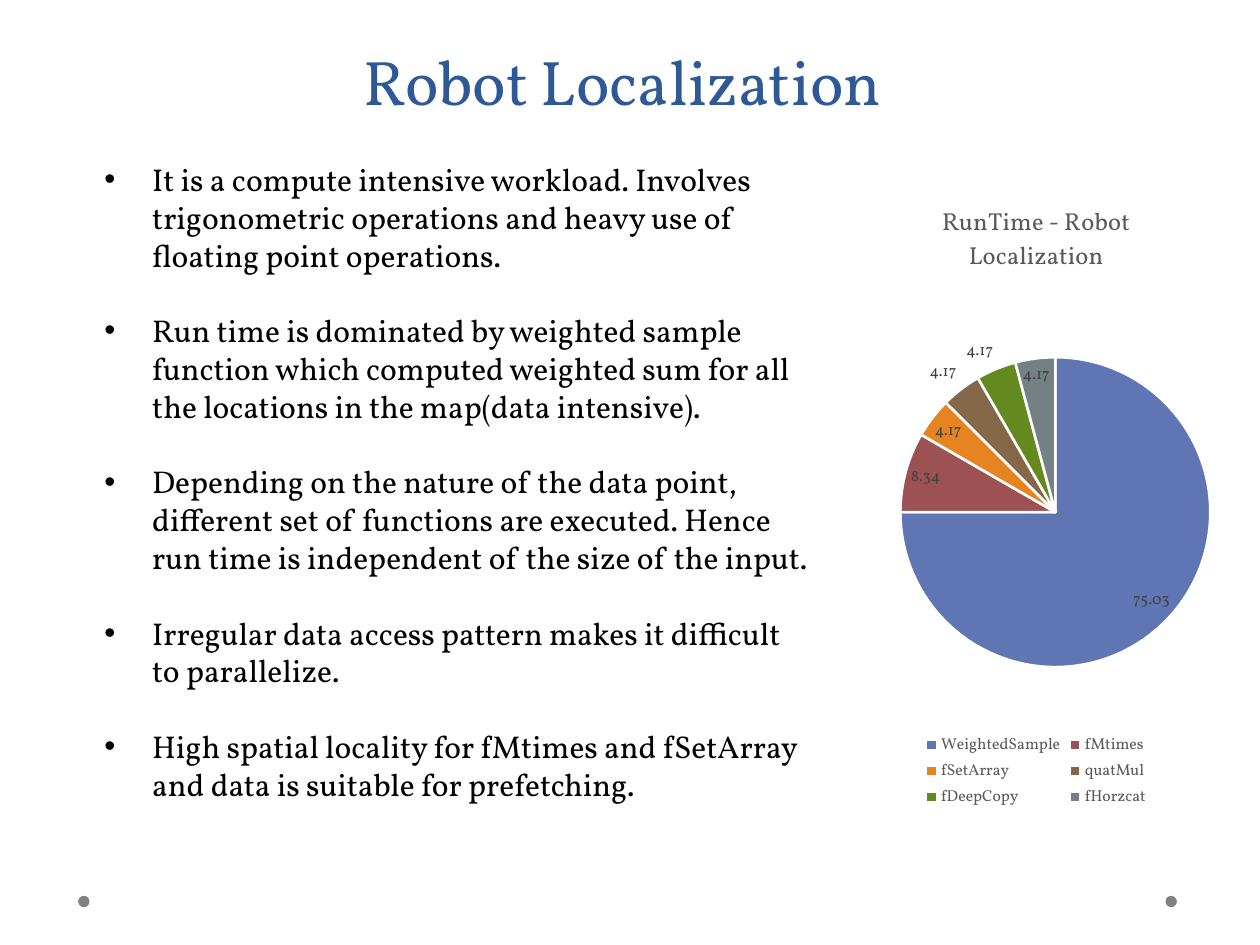
"""Build the Robot Localization slide with its bullets and run-time pie."""
from pptx import Presentation
from pptx.chart.data import CategoryChartData
from pptx.dml.color import RGBColor
from pptx.enum.chart import XL_CHART_TYPE, XL_LABEL_POSITION, XL_LEGEND_POSITION
from pptx.enum.shapes import MSO_SHAPE
from pptx.enum.text import MSO_ANCHOR, MSO_AUTO_SIZE, PP_ALIGN
from pptx.oxml import parse_xml
from pptx.oxml.ns import nsdecls
from pptx.util import Inches, Pt

TITLE = "Robot Localization"
POINTS = [
    "It is a compute intensive workload. Involves trigonometric operations and heavy use of floating point operations.",
    "Run time is dominated by weighted sample function which computed weighted sum for all the locations in the map(data intensive).",
    "Depending on the nature of the data point, different set of functions are executed. Hence run time is independent of the size of the input.",
    "Irregular data access pattern makes it difficult to parallelize.",
    "High spatial locality for fMtimes and fSetArray and data is suitable for prefetching.",
]
HEAD = "RunTime - Robot Localization"
SHARES = [
    ("WeightedSample", 75.03, RGBColor(0x60, 0x76, 0xB4)),
    ("fMtimes", 8.34, RGBColor(0x9C, 0x52, 0x52)),
    ("fSetArray", 4.17, RGBColor(0xE6, 0x84, 0x22)),
    ("quatMul", 4.17, RGBColor(0x84, 0x66, 0x48)),
    ("fDeepCopy", 4.17, RGBColor(0x63, 0x89, 0x1F)),
    ("fHorzcat", 4.17, RGBColor(0x75, 0x80, 0x85)),
]
FACE = "Vollkorn"
BLUE = RGBColor(0x2F, 0x58, 0x97)
BLACK = RGBColor(0, 0, 0)
WHITE = RGBColor(255, 255, 255)
GRAY = RGBColor(0x80, 0x80, 0x80)
DIM = RGBColor(0x59, 0x59, 0x59)
DARK = RGBColor(0x40, 0x40, 0x40)
WIDE, HIGH = 10, 7.5
DOT = 0.09
LEAD = Pt(21.6)
PLOT = {"x": 0.14, "y": 0.28, "w": 0.82, "h": 0.49}


def box(left, top, width, height):
    """Return a frame in inches."""
    return [Inches(n) for n in (left, top, width, height)]


def style(font, size, color):
    """Set the face, size and colour of a font."""
    font.name, font.size, font.bold = FACE, Pt(size), False
    font.color.rgb = color


def add_dots(slide):
    """Draw the two foot dots."""
    for left in (0.62, 9.25):
        dot = slide.shapes.add_shape(MSO_SHAPE.OVAL, *box(left, 7.11, DOT, DOT))
        dot.shadow.inherit = False
        dot.fill.solid()
        dot.fill.fore_color.rgb = GRAY
        dot.line.fill.background()


def add_title(slide):
    """Place and format the title."""
    title = slide.shapes.title
    title.left, title.top, title.width, title.height = box(0.08, 0.28, 9.72, 0.56)
    frame = title.text_frame
    frame.text = TITLE
    frame.auto_size = MSO_AUTO_SIZE.NONE
    frame.vertical_anchor = MSO_ANCHOR.TOP
    frame.margin_top = Inches(0.06)
    para = frame.paragraphs[0]
    para.alignment = PP_ALIGN.CENTER
    style(para.runs[0].font, 36, BLUE)


def add_points(slide):
    """Write the bullet list."""
    frame = slide.shapes.add_textbox(*box(0.23, 0.81, 6.31, 7.47)).text_frame
    frame.word_wrap = True
    frame.margin_top = Inches(0.46)
    frame.text = "\n".join(POINTS)
    for para in frame.paragraphs:
        para.line_spacing = para.space_after = LEAD
        style(para.runs[0].font, 18, BLACK)
        props = para._p.get_or_add_pPr()
        props.set("marL", str(Inches(0.88)))
        props.set("indent", str(Inches(-0.38)))
        for tag in ('buFont %s typeface="Arial"', 'buChar %s char="•"'):
            props.append(parse_xml(f"<a:{tag % nsdecls('a')}/>"))


def set_plot(chart):
    """Fix the pie's place inside the chart."""
    area = chart.element.chart.plotArea
    for old in area.findall("{*}layout"):
        area.remove(old)
    modes = "".join(f'<c:{n}Mode val="edge"/>' for n in "xy")
    sizes = "".join(f'<c:{n} val="{v}"/>' for n, v in PLOT.items())
    area.insert(0, parse_xml(
        f'<c:layout {nsdecls("c")}><c:manualLayout><c:layoutTarget val="inner"/>'
        f"{modes}{sizes}</c:manualLayout></c:layout>"))


def add_pie(slide):
    """Add the run-time pie chart."""
    names, values, colors = zip(*SHARES)
    data = CategoryChartData()
    data.categories = names
    data.add_series("Series 1", values)
    chart = slide.shapes.add_chart(
        XL_CHART_TYPE.PIE, *box(6.71, 1.43, 3.03, 5.02), data).chart
    style(chart.font, 10, BLACK)
    chart.has_title = True
    head = chart.chart_title.text_frame
    head.text = HEAD
    style(head.paragraphs[0].runs[0].font, 14, DIM)
    chart.chart_title.include_in_layout = False
    chart.has_legend = True
    chart.legend.position = XL_LEGEND_POSITION.BOTTOM
    chart.legend.include_in_layout = False
    style(chart.legend.font, 9, DIM)
    plot = chart.plots[0]
    plot.vary_by_categories = True
    series = plot.series[0]
    for spot, color in enumerate(colors):
        slice_ = series.points[spot].format
        slice_.fill.solid()
        slice_.fill.fore_color.rgb = color
        slice_.line.color.rgb = WHITE
        slice_.line.width = Pt(1.5)
    labels = series.data_labels
    labels.show_value = True
    labels.position = XL_LABEL_POSITION.BEST_FIT
    style(labels.font, 9, DARK)
    set_plot(chart)


def main():
    """Build and save the slide."""
    deck = Presentation()
    deck.slide_width, deck.slide_height = Inches(WIDE), Inches(HIGH)
    slide = deck.slides.add_slide(deck.slide_layouts[5])
    for add in (add_dots, add_points, add_pie, add_title):
        add(slide)
    deck.save("out.pptx")


if __name__ == "__main__":
    main()
